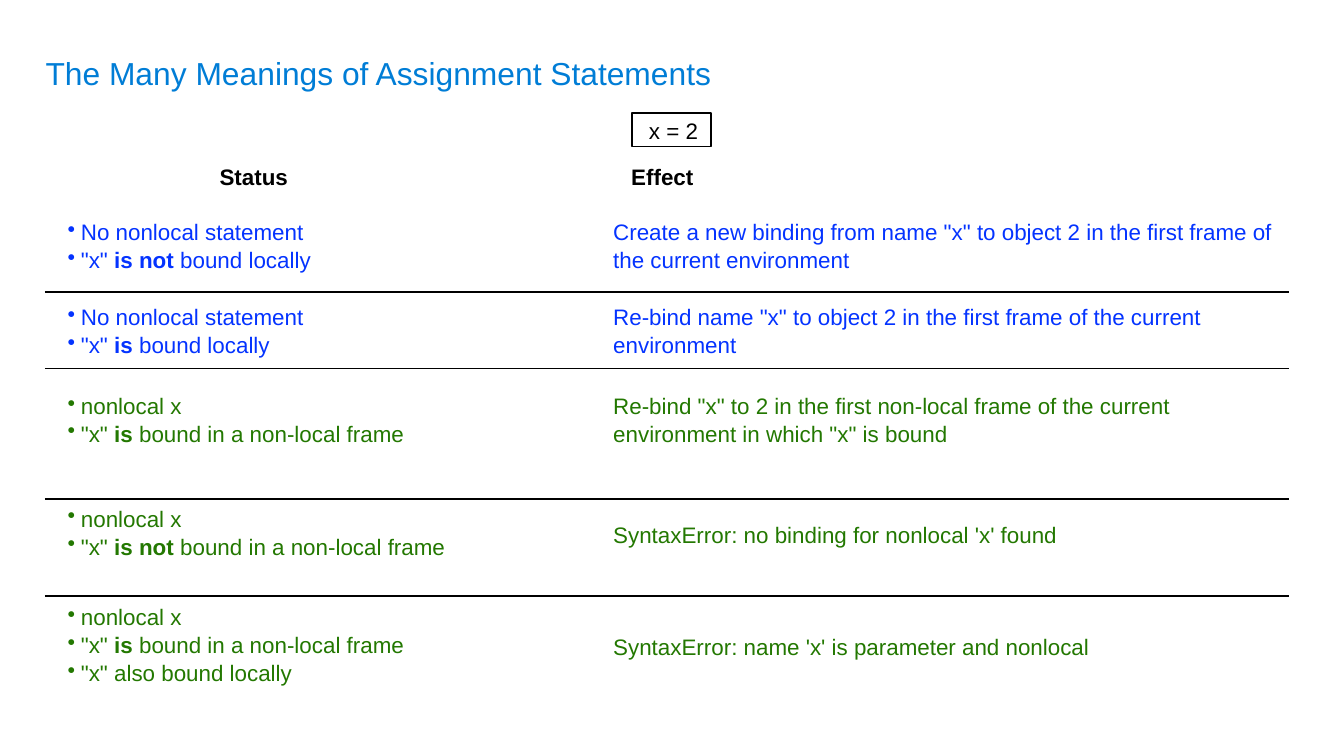
from lxml import etree
from pptx import Presentation
from pptx.dml.color import RGBColor
from pptx.enum.shapes import MSO_CONNECTOR, MSO_SHAPE
from pptx.enum.text import MSO_ANCHOR, MSO_AUTO_SIZE, PP_ALIGN
from pptx.oxml.ns import qn
from pptx.util import Cm, Pt

TOP, MIDDLE, BOTTOM = MSO_ANCHOR.TOP, MSO_ANCHOR.MIDDLE, MSO_ANCHOR.BOTTOM
LEFT, CENTER = PP_ALIGN.LEFT, PP_ALIGN.CENTER
NO_FIT = MSO_AUTO_SIZE.NONE
COLORS = {"title": "007DD6", "ink": "000000", "local": "0433FF", "nonlocal": "237801"}
FONT = "Arial"
INSET = Cm(0.05)
INDENT = Cm(0.08)
BULLET_INDENT, BULLET_HANG = Cm(0.36), Cm(0.25)
STATUS_LEFT, STATUS_WIDTH = Cm(1.12), Cm(9)
EFFECT_LEFT, EFFECT_WIDTH = Cm(11.46), Cm(12.83)
LINE_HEIGHT = 0.51


def set_frame(shape, anchor, inset=INSET):
    """Fix the wrapping, anchor and margins of a shape's text."""
    frame = shape.text_frame
    settings = {
        "word_wrap": True, "auto_size": NO_FIT, "vertical_anchor": anchor,
        "margin_left": inset, "margin_right": inset,
        "margin_top": inset, "margin_bottom": inset,
    }
    for name, value in settings.items():
        setattr(frame, name, value)
    return frame


def write(paragraph, text, color, size=12, align=LEFT, spacing=1.04, bullet=False, indent=INDENT):
    """Fill a paragraph; parts between asterisks are bold."""
    paragraph.alignment = align
    paragraph.line_spacing = spacing
    properties = paragraph._p.get_or_add_pPr()
    properties.set("marL", str(BULLET_INDENT if bullet else indent))
    properties.set("indent", str(-BULLET_HANG if bullet else 0))
    if bullet:
        bullet_color = etree.SubElement(properties, qn("a:buClr"))
        etree.SubElement(bullet_color, qn("a:srgbClr"), val=COLORS[color])
        etree.SubElement(properties, qn("a:buChar"), char="•")
    for number, part in enumerate(text.split("*")):
        if part:
            run = paragraph.add_run()
            run.text = part
            run.font.name, run.font.size = FONT, Pt(size)
            run.font.bold = number % 2 == 1
            run.font.color.rgb = RGBColor.from_string(COLORS[color])


prs = Presentation()
prs.slide_width, prs.slide_height = Cm(25.4), Cm(14.28)
slide = prs.slides.add_slide(prs.slide_layouts[5])
shapes = slide.shapes

title = shapes.title
title.left, title.top, title.width, title.height = Cm(0.86), Cm(0), Cm(19.33), Cm(1.75)
heading = set_frame(title, BOTTOM, inset=0).paragraphs[0]
write(heading, "The Many Meanings of Assignment Statements", "title",
      size=17, spacing=0.9, indent=0)

statement = shapes.add_shape(MSO_SHAPE.RECTANGLE, Cm(11.94), Cm(2.13), Cm(1.5), Cm(0.64))
statement.shadow.inherit = False
statement.fill.background()
statement.line.color.rgb = RGBColor.from_string(COLORS["ink"])
statement.line.width = Pt(1)
write(set_frame(statement, MIDDLE).paragraphs[0], "x = 2", "ink", align=CENTER)

for header, left in (("Status", 4.02), ("Effect", 11.8)):
    header_box = shapes.add_textbox(Cm(left), Cm(3.03), Cm(1.73), Cm(0.61))
    write(set_frame(header_box, MIDDLE).paragraphs[0], f"*{header}*", "ink")

# Color, top of status, status lines, top of effect, effect
cases = [
    ("local", 4.06, ["No nonlocal statement", '"x" *is not* bound locally'], 4.06,
     'Create a new binding from name "x" to object 2 in the first frame of the current environment'),
    ("local", 5.66, ["No nonlocal statement", '"x" *is* bound locally'], 5.66,
     'Re-bind name "x" to object 2 in the first frame of the current environment'),
    ("nonlocal", 7.34, ["nonlocal x", '"x" *is* bound in a non-local frame'], 7.34,
     'Re-bind "x" to 2 in the first non-local frame of the current environment in which "x" is bound'),
    ("nonlocal", 9.47, ["nonlocal x", '"x" *is not* bound in a non-local frame'], 9.78,
     "SyntaxError: no binding for nonlocal 'x' found"),
    ("nonlocal", 11.33,
     ["nonlocal x", '"x" *is* bound in a non-local frame', '"x" also bound locally'], 11.89,
     "SyntaxError: name 'x' is parameter and nonlocal"),
]
for color, status_top, conditions, effect_top, effect in cases:
    status_height = Cm(LINE_HEIGHT * len(conditions) + 0.1)
    status = shapes.add_textbox(STATUS_LEFT, Cm(status_top), STATUS_WIDTH, status_height)
    status_text = set_frame(status, TOP)
    for number, condition in enumerate(conditions):
        paragraph = status_text.add_paragraph() if number else status_text.paragraphs[0]
        write(paragraph, condition, color, bullet=True)

    effect_lines = 1 if effect.startswith("SyntaxError") else 2
    effect_height = Cm(LINE_HEIGHT * effect_lines + 0.1)
    outcome = shapes.add_textbox(EFFECT_LEFT, Cm(effect_top), EFFECT_WIDTH, effect_height)
    write(set_frame(outcome, TOP).paragraphs[0], effect, color)

for rule_y in (5.51, 6.96, 9.42, 11.26):
    rule = shapes.add_connector(MSO_CONNECTOR.STRAIGHT, Cm(0.85), Cm(rule_y), Cm(24.36), Cm(rule_y))
    rule.line.color.rgb = RGBColor.from_string(COLORS["ink"])
    rule.line.width = Pt(1)
    etree.SubElement(rule._element.spPr, qn("a:effectLst"))

prs.save("out.pptx")
